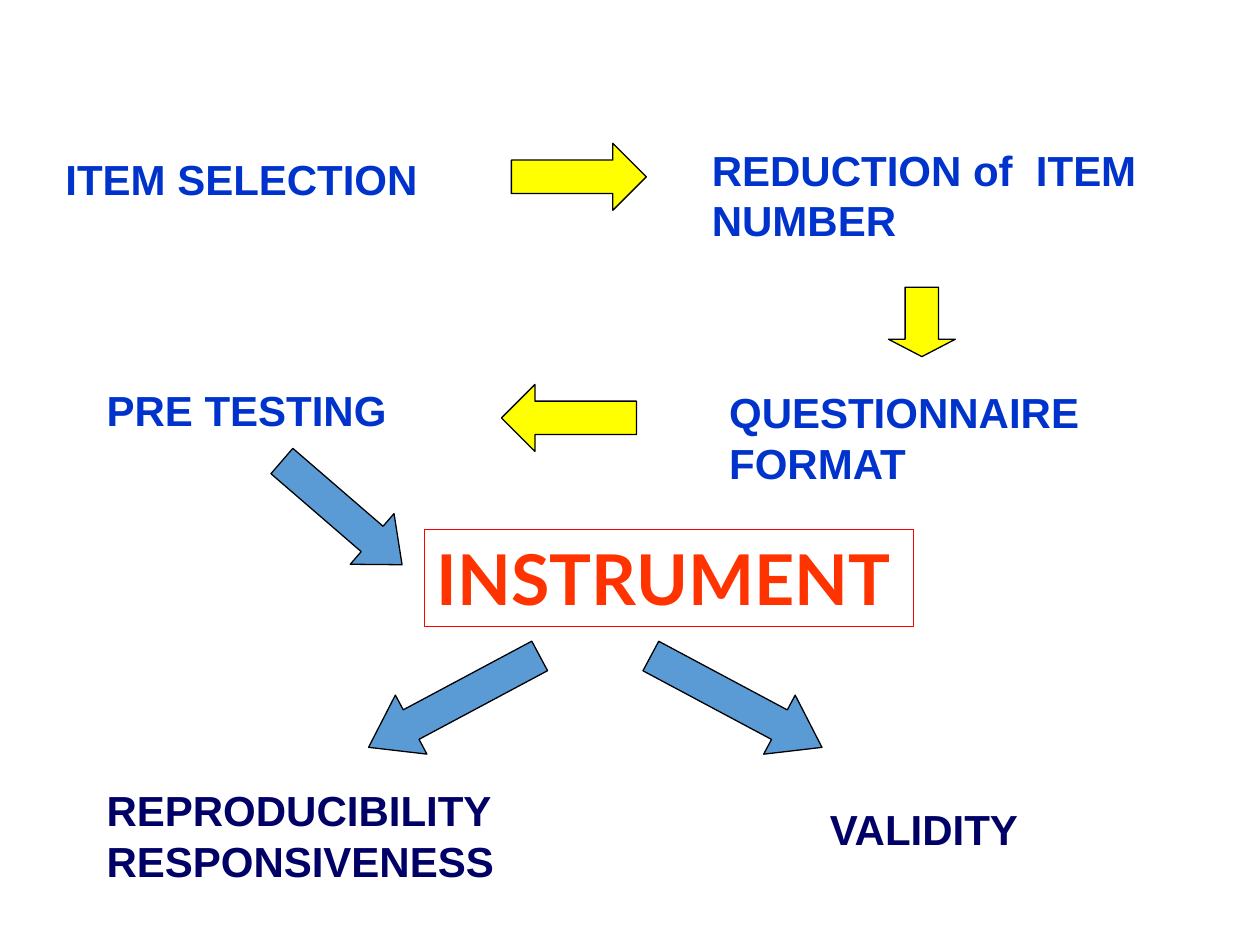
from dataclasses import dataclass

from pptx import Presentation
from pptx.dml.color import RGBColor
from pptx.enum.shapes import MSO_SHAPE
from pptx.enum.text import MSO_ANCHOR, MSO_AUTO_SIZE, PP_ALIGN
from pptx.util import Cm, Pt

RECTANGLE = MSO_SHAPE.RECTANGLE
RIGHT_ARROW = MSO_SHAPE.RIGHT_ARROW
LEFT_ARROW = MSO_SHAPE.LEFT_ARROW
DOWN_ARROW = MSO_SHAPE.DOWN_ARROW
TOP = MSO_ANCHOR.TOP
GROW = MSO_AUTO_SIZE.SHAPE_TO_FIT_TEXT
LEFT = PP_ALIGN.LEFT


@dataclass(frozen=True)
class Theme:
    """Colours, fonts and sizes of the slide."""

    step: RGBColor = RGBColor(0x00, 0x33, 0xCC)
    outcome: RGBColor = RGBColor(0x00, 0x00, 0x66)
    instrument: RGBColor = RGBColor(0xFF, 0x33, 0x00)
    frame: RGBColor = RGBColor(0xFF, 0x00, 0x00)
    step_arrow: RGBColor = RGBColor(0xFF, 0xFF, 0x00)
    link_arrow: RGBColor = RGBColor(0x5B, 0x9B, 0xD5)
    outline: RGBColor = RGBColor(0x00, 0x00, 0x00)
    label_font: str = "Arial"
    instrument_font: str = "Lato"
    label_size: Pt = Pt(24)
    instrument_size: Pt = Pt(40)
    line_width: Pt = Pt(0.75)


THEME = Theme()
ARROW_WIDTH = 1.35


def place(origin, offset, size):
    """Return left, top, width and height for a part of a region."""
    return (Cm(origin[0] + offset[0]), Cm(origin[1] + offset[1]),
            Cm(size[0]), Cm(size[1]))


def write_text(shape, lines, font_name, font_size, color):
    """Write bold left-aligned lines, one paragraph each."""
    frame = shape.text_frame
    frame.word_wrap = False
    frame.auto_size = GROW
    frame.vertical_anchor = TOP
    for index, line in enumerate(lines):
        paragraph = frame.add_paragraph() if index else frame.paragraphs[0]
        paragraph.alignment = LEFT
        run = paragraph.add_run()
        run.text = line
        run.font.name = font_name
        run.font.size = font_size
        run.font.bold = True
        run.font.color.rgb = color


def add_label(slide, bounds, lines, color):
    """Add a label of one or more lines."""
    textbox = slide.shapes.add_textbox(*bounds)
    write_text(textbox, lines, THEME.label_font, THEME.label_size, color)


def add_arrow(slide, kind, bounds, fill, head=0.5, rotation=0):
    """Add an outlined block arrow with the given head length."""
    arrow = slide.shapes.add_shape(kind, *bounds)
    arrow.shadow.inherit = False
    arrow.adjustments[0] = 0.5
    arrow.adjustments[1] = head
    arrow.rotation = rotation
    arrow.fill.solid()
    arrow.fill.fore_color.rgb = fill
    arrow.line.color.rgb = THEME.outline
    arrow.line.width = THEME.line_width


def add_steps(slide, origin):
    """Add the four development steps and the arrows between them."""
    labels = [
        (["ITEM SELECTION"], (0, 0.18), (7.67, 1.27)),
        (["REDUCTION of  ITEM", "NUMBER"], (13.03, 0), (9.4, 2.31)),
        (["QUESTIONNAIRE", "FORMAT"], (13.38, 4.88), (7.87, 2.31)),
        (["PRE TESTING"], (0.83, 4.83), (6.2, 1.27)),
    ]
    for lines, offset, size in labels:
        add_label(slide, place(origin, offset, size), lines, THEME.step)
    arrows = [
        (RIGHT_ARROW, (9.24, 0.1), (2.72, ARROW_WIDTH), 0.5),
        (DOWN_ARROW, (16.84, 3), (ARROW_WIDTH, 1.4), 0.26),
        (LEFT_ARROW, (9.04, 4.96), (2.72, ARROW_WIDTH), 0.5),
    ]
    for kind, offset, size, head in arrows:
        add_arrow(slide, kind, place(origin, offset, size),
                  THEME.step_arrow, head)


def add_instrument(slide, origin):
    """Add the framed instrument with its incoming and outgoing arrows."""
    box = slide.shapes.add_shape(
        RECTANGLE, *place(origin, (2.34, 1.93), (9.86, 1.96)))
    box.shadow.inherit = False
    box.fill.background()
    box.line.color.rgb = THEME.frame
    box.line.width = THEME.line_width
    write_text(box, ["INSTRUMENT"], THEME.instrument_font,
               THEME.instrument_size, THEME.instrument)
    arrows = [
        ((0, 0), 3.2, 0.59, 310.8),
        ((2.26, 3.45), 3.91, 0.72, 61.9),
        ((7.95, 3.45), 3.91, 0.72, 298.1),
    ]
    for offset, length, head, rotation in arrows:
        add_arrow(slide, DOWN_ARROW,
                  place(origin, offset, (ARROW_WIDTH, length)),
                  THEME.link_arrow, head, rotation)


def add_outcomes(slide, origin):
    """Add the measured properties of the instrument."""
    add_label(slide, place(origin, (0, 0), (8.41, 2.31)),
              ["REPRODUCIBILITY", "RESPONSIVENESS"], THEME.outcome)
    add_label(slide, place(origin, (14.58, 0.38), (4.34, 1.27)),
              ["VALIDITY"], THEME.outcome)


def main():
    """Build and save the slide."""
    presentation = Presentation()
    presentation.slide_width = Cm(25.4)
    presentation.slide_height = Cm(19.05)
    slide = presentation.slides.add_slide(presentation.slide_layouts[6])
    add_steps(slide, (1.07, 2.79))
    add_instrument(slide, (6.22, 8.74))
    add_outcomes(slide, (1.9, 15.7))
    presentation.save("out.pptx")


if __name__ == "__main__":
    main()
